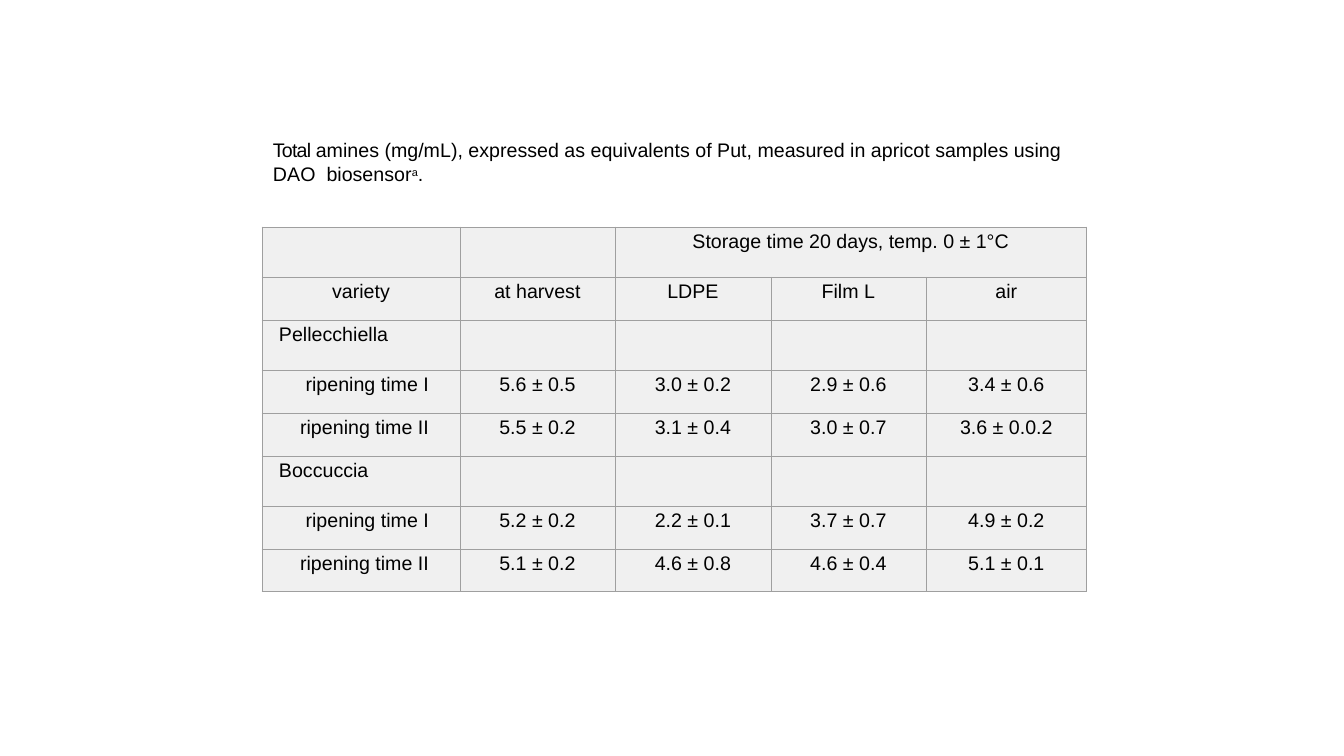
"""Build the slide with the table of total amines in apricot samples."""
from dataclasses import dataclass

from lxml.etree import SubElement
from pptx import Presentation
from pptx.dml.color import RGBColor as Rgb
from pptx.enum.text import MSO_AUTO_SIZE as AutoSize, PP_ALIGN as Align
from pptx.oxml.ns import qn
from pptx.util import Emu, Pt

EMU_PER_PX = 914400 / 100.8


@dataclass(frozen=True)
class Theme:
    """Colours, font and sizes of the slide."""
    font: str = "Arial"
    ink: str = "000000"
    cell: str = "F0F0F0"
    rule: str = "9F9F9F"
    size: float = 14
    note_size: float = 13.5
    outer_rule: float = 0.75
    inner_rule: float = 0.25


THEME = Theme()
COLUMNS = [198, 155, 156, 155, 161]
TALL, LOW = 50, 43
ROWS = [
    (TALL, ["", "", "Storage time 20 days, temp. 0 ± 1°C", "", ""]),
    (LOW, ["variety", "at harvest", "LDPE", "Film L", "air"]),
    (TALL, ["Pellecchiella", "", "", "", ""]),
    (LOW, ["ripening time I", "5.6 ± 0.5", "3.0 ± 0.2", "2.9 ± 0.6", "3.4 ± 0.6"]),
    (LOW, ["ripening time II", "5.5 ± 0.2", "3.1 ± 0.4", "3.0 ± 0.7", "3.6 ± 0.0.2"]),
    (TALL, ["Boccuccia", "", "", "", ""]),
    (LOW, ["ripening time I", "5.2 ± 0.2", "2.2 ± 0.1", "3.7 ± 0.7", "4.9 ± 0.2"]),
    (LOW, ["ripening time II", "5.1 ± 0.2", "4.6 ± 0.8", "4.6 ± 0.4", "5.1 ± 0.1"]),
]
CAPTION = [
    ("Total ", {"spc": -60}),
    ("amines (mg/mL), expressed as equivalents of Put, ", {}),
    ("measured in apricot samples using DAO", {}),
    (" ", {"spc": 390}),
    ("biosensor", {}),
    ("a", {"baseline": 22000}),
    (".", {}),
]


def px(length):
    """Turn pixels into EMU."""
    return Emu(round(length * EMU_PER_PX))


def apply_format(target, values):
    """Set each named attribute on the target."""
    for name, value in values.items():
        setattr(target, name, value)


def set_margins(target, left=0, top=0, right=0, bottom=0):
    """Set the four inner margins of a cell or text frame."""
    apply_format(target, {
        "margin_left": px(left), "margin_top": px(top),
        "margin_right": px(right), "margin_bottom": px(bottom),
    })


def add_span(para, text, size=THEME.size, **attributes):
    """Add a run in the theme font with extra run attributes."""
    span = para.add_run()
    span.text = text
    apply_format(span.font, {"name": THEME.font, "size": Pt(size)})
    span.font.color.rgb = Rgb.from_string(THEME.ink)
    for name, value in attributes.items():
        span.font._element.set(name, str(value))


def add_border(cell, side, width):
    """Draw one side of a cell."""
    line = SubElement(cell._tc.get_or_add_tcPr(), qn(f"a:ln{side}"), w=str(Pt(width)))
    fill = SubElement(line, qn("a:solidFill"))
    SubElement(fill, qn("a:srgbClr"), val=THEME.rule)


def style_cell(cell, outer_sides):
    """Give a cell its borders, heavier on the outer sides, and its fill."""
    for side in "LRTB":
        width = THEME.outer_rule if side in outer_sides else THEME.inner_rule
        add_border(cell, side, width)
    cell.fill.solid()
    cell.fill.fore_color.rgb = Rgb.from_string(THEME.cell)


def fill_cell(cell, text, is_label):
    """Write the text of a cell, aligned by its role."""
    align, left, right = Align.CENTER, 0, 0
    if is_label and text.startswith("ripening"):
        align, right = Align.RIGHT, 31
    elif is_label and text != "variety":
        align, left = Align.LEFT, 17
    set_margins(cell, left=left, top=4, right=right)
    if text:
        para = cell.text_frame.paragraphs[0]
        para.alignment = align
        add_span(para, text)


def add_amine_table(page, left, top):
    """Add the table of amine values."""
    heights = [height for height, _ in ROWS]
    table = page.shapes.add_table(
        len(ROWS), len(COLUMNS), px(left), px(top), px(sum(COLUMNS)), px(sum(heights))
    ).table
    apply_format(table, {"first_row": False, "horz_banding": False})
    for column, width in zip(table.columns, COLUMNS):
        column.width = px(width)
    for row, height in zip(table.rows, heights):
        row.height = px(height)
    last_row, last_column = len(ROWS) - 1, len(COLUMNS) - 1
    table.cell(0, 2).merge(table.cell(0, last_column))
    for r, (_, texts) in enumerate(ROWS):
        for c, text in enumerate(texts):
            cell = table.cell(r, c)
            end = c + cell.span_width - 1
            edges = {"L": c == 0, "R": end == last_column, "T": r == 0, "B": r == last_row}
            style_cell(cell, [side for side, is_outer in edges.items() if is_outer])
            fill_cell(cell, text, c == 0)


def add_caption(page, left, top, width, height):
    """Add the caption above the table."""
    box = page.shapes.add_textbox(px(left), px(top), px(width), px(height))
    frame = box.text_frame
    apply_format(frame, {"word_wrap": True, "auto_size": AutoSize.SHAPE_TO_FIT_TEXT})
    set_margins(frame, left=4, top=1, right=20)
    para = frame.paragraphs[0]
    for text, attributes in CAPTION:
        size = THEME.note_size if "baseline" in attributes else THEME.size
        add_span(para, text, size, **attributes)


def main():
    """Build and save the deck."""
    deck = Presentation()
    apply_format(deck, {"slide_width": px(1344), "slide_height": px(756)})
    page = deck.slides.add_slide(deck.slide_layouts[6])
    add_amine_table(page, 262, 227)
    add_caption(page, 269, 137, 839, 50)
    deck.save("out.pptx")


if __name__ == "__main__":
    main()
